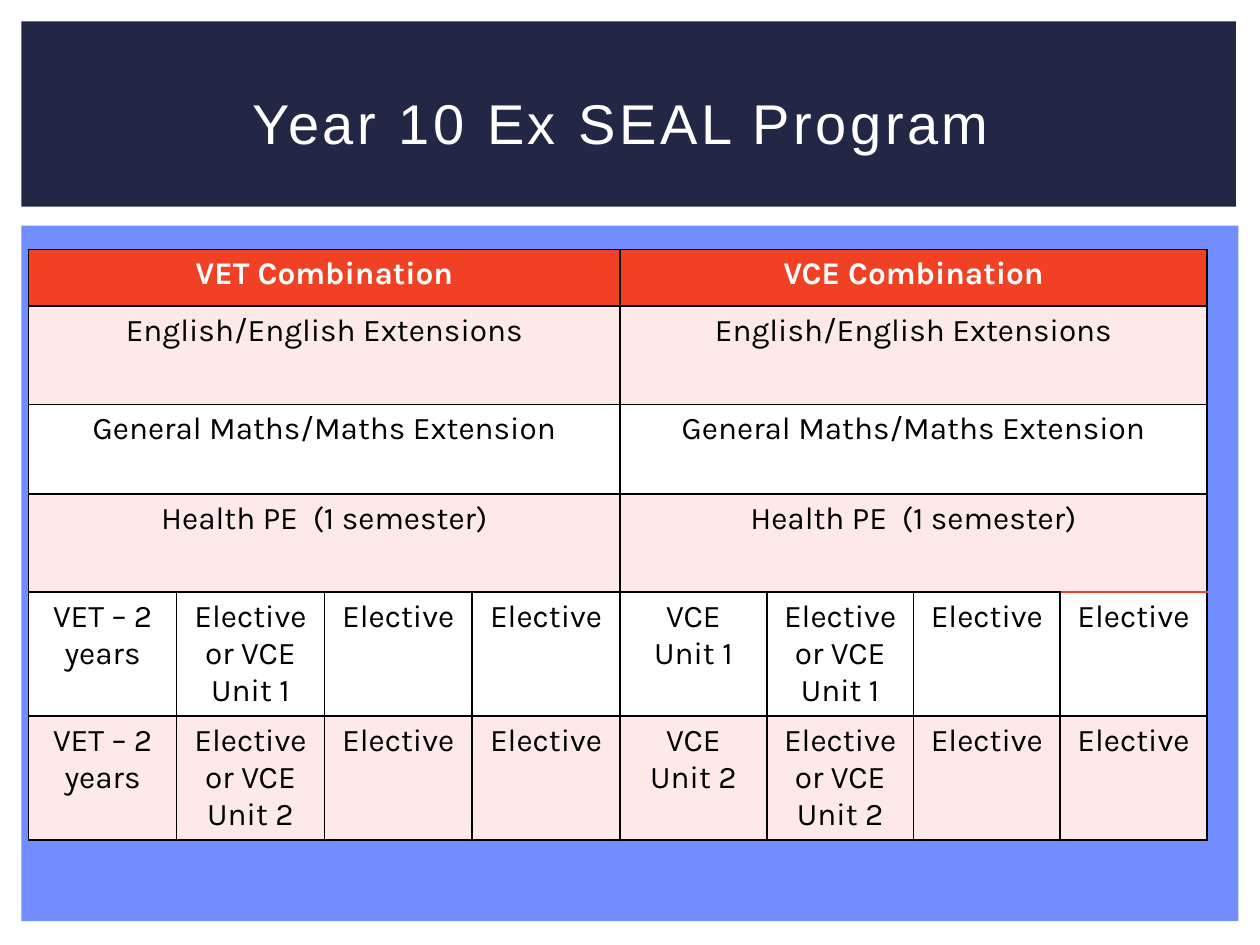
from lxml.etree import SubElement
from pptx import Presentation
from pptx.dml.color import RGBColor
from pptx.enum.shapes import MSO_SHAPE
from pptx.enum.text import MSO_ANCHOR, PP_ALIGN
from pptx.oxml.ns import qn
from pptx.util import Pt

COLORS = {
    "navy": "212745",
    "blue": "718DFF",
    "red": "F14124",
    "pink": "FCE9E8",
    "white": "FFFFFF",
    "black": "000000",
}
TITLE_FORMAT = {"name": "Arial", "size": Pt(32)}
HEADER_FORMAT = {"name": "Karla", "size": Pt(18), "bold": True}
BODY_FORMAT = {"name": "Karla", "size": Pt(18), "bold": False}

SPAN = 4  # columns under each combination
COLUMN_WIDTHS = [84.5] * SPAN + [83.85] * SPAN
ROW_HEIGHTS = [32.4, 56.16, 51.12, 56.16, 70.8, 70.8]
SHARED_ROWS = [
    ("VET Combination", "VCE Combination"),
    ("English/English Extensions",) * 2,
    ("General Maths/Maths Extension",) * 2,
    ("Health PE  (1 semester)",) * 2,
]
UNIT_ROWS = [
    ("VET – 2 years", "Elective or VCE\nUnit 1", "Elective", "Elective",
     "VCE Unit 1", "Elective or VCE Unit 1", "Elective", "Elective"),
    ("VET – 2 years", "Elective or VCE Unit 2", "Elective", "Elective",
     "VCE Unit 2", "Elective or VCE Unit 2", "Elective", "Elective"),
]


def color(name):
    return RGBColor.from_string(COLORS[name])


def add_panel(page, left, top, width, height, fill):
    panel = page.shapes.add_shape(
        MSO_SHAPE.RECTANGLE, Pt(left), Pt(top), Pt(width), Pt(height))
    panel.shadow.inherit = False
    panel.fill.solid()
    panel.fill.fore_color.rgb = color(fill)
    panel.line.fill.background()


def write_text(frame, text, text_color, text_format):
    """Write centred paragraphs, one per line of text."""
    frame.text = text
    for para in frame.paragraphs:
        para.alignment = PP_ALIGN.CENTER
        for span in para.runs:
            span.font.color.rgb = color(text_color)
            for name, value in text_format.items():
                setattr(span.font, name, value)


def add_title(page, text):
    box = page.shapes.add_textbox(Pt(30.24), Pt(28.08), Pt(660.24), Pt(82.8))
    frame = box.text_frame
    frame.word_wrap = True
    frame.vertical_anchor = MSO_ANCHOR.MIDDLE
    write_text(frame, text, "white", TITLE_FORMAT)
    for span in frame.paragraphs[0].runs:
        span.font._element.set("spc", "200")


def set_borders(cell, top="black"):
    properties = cell._tc.get_or_add_tcPr()
    sides = {"lnL": "black", "lnR": "black", "lnT": top, "lnB": "black"}
    for side, name in sides.items():
        line = SubElement(properties, qn(f"a:{side}"), w=str(Pt(1)))
        fill = SubElement(line, qn("a:solidFill"))
        SubElement(fill, qn("a:srgbClr"), val=COLORS[name])


def add_program_table(page):
    row_count, column_count = len(ROW_HEIGHTS), len(COLUMN_WIDTHS)
    table = page.shapes.add_table(
        row_count, column_count, Pt(16.4), Pt(142.5),
        Pt(sum(COLUMN_WIDTHS)), Pt(sum(ROW_HEIGHTS))).table
    for column, width in zip(table.columns, COLUMN_WIDTHS):
        column.width = Pt(width)
    for row, height in zip(table.rows, ROW_HEIGHTS):
        row.height = Pt(height)

    # Borders and alternating row fills
    first_unit_row = len(SHARED_ROWS)
    for r in range(row_count):
        row_fill = "red" if r == 0 else ("white", "pink")[r % 2]
        for c in range(column_count):
            cell = table.cell(r, c)
            is_accent = (r, c) == (first_unit_row, column_count - 1)
            set_borders(cell, "red" if is_accent else "black")
            cell.fill.solid()
            cell.fill.fore_color.rgb = color(row_fill)

    # Rows with one merged cell per combination, then one cell per unit
    for r, texts in enumerate(SHARED_ROWS + UNIT_ROWS):
        step = column_count // len(texts)
        text_color, text_format = (
            ("white", HEADER_FORMAT) if r == 0 else ("black", BODY_FORMAT))
        for i, text in enumerate(texts):
            cell = table.cell(r, i * step)
            if step > 1:
                cell.merge(table.cell(r, (i + 1) * step - 1))
            write_text(cell.text_frame, text, text_color, text_format)


def main():
    deck = Presentation()
    deck.slide_width, deck.slide_height = Pt(720), Pt(540)
    page = deck.slides.add_slide(deck.slide_layouts[6])

    # Background panels
    add_panel(page, 12.24, 128.88, 695.52, 397.44, "blue")
    add_panel(page, 12.24, 12.24, 694.08, 105.84, "navy")

    # Content
    add_program_table(page)
    add_title(page, "Year 10 Ex SEAL Program ")

    deck.save("out.pptx")


if __name__ == "__main__":
    main()
